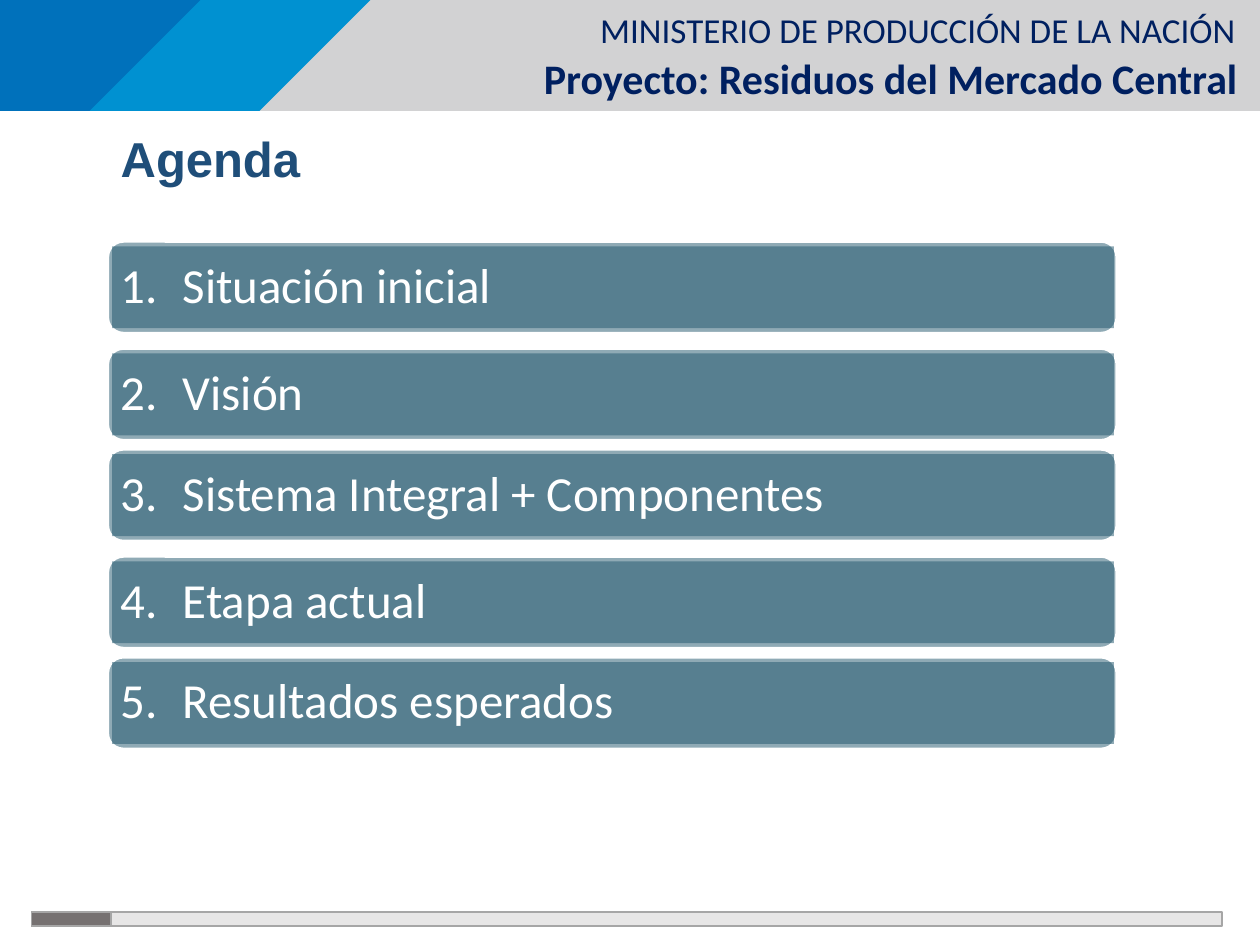
from dataclasses import dataclass

from lxml import etree
from pptx import Presentation
from pptx import util as u
from pptx.dml.color import RGBColor
from pptx.enum import shapes, text
from pptx.oxml import ns


@dataclass(frozen=True)
class Theme:
    band: str = "D2D2D3"
    sky: str = "0091D1"
    blue: str = "0071BB"
    navy: str = "002060"
    heading: str = "1F4E79"
    bar: str = "20566C"
    white: str = "FFFFFF"
    track: str = "E7E6E6"
    progress: str = "767171"
    outline: str = "A6A6A6"
    body_font: str = "Calibri"
    heading_font: str = "Arial"
    small: int = 20
    medium: int = 24
    large: int = 28


theme = Theme()
presentation = Presentation()
presentation.slide_width = u.Inches(10)
presentation.slide_height = u.Inches(7.5)
slide = presentation.slides.add_slide(presentation.slide_layouts[6])
column = presentation.slide_width // 100
row = presentation.slide_height // 75


def paint(shape, color, line=None, opacity=None):
    shape.shadow.inherit = False
    shape.fill.solid()
    shape.fill.fore_color.rgb = RGBColor.from_string(color)
    if opacity:
        color_element = shape.fill._xPr.find(f".//{ns.qn('a:srgbClr')}")
        etree.SubElement(color_element, ns.qn("a:alpha"), val=str(opacity * 1000))
    if line:
        shape.line.color.rgb = RGBColor.from_string(line)
        shape.line.width = u.Pt(1)
    else:
        shape.line.fill.background()


def write(shape, content, size, color, font=theme.body_font, bold=False, wrap=True,
          align=text.PP_ALIGN.LEFT, anchor=text.MSO_ANCHOR.TOP,
          margins=(1, 0.5), spacing=1.0, tab=None):
    frame = shape.text_frame
    frame.word_wrap = wrap
    frame.vertical_anchor = anchor
    frame.margin_left = frame.margin_right = int(margins[0] * column)
    frame.margin_top = frame.margin_bottom = int(margins[1] * row)
    paragraph = frame.paragraphs[0]
    paragraph.text = content
    paragraph.alignment = align
    paragraph.line_spacing = spacing
    if tab:
        tabs = etree.SubElement(paragraph._p.get_or_add_pPr(), ns.qn("a:tabLst"))
        etree.SubElement(tabs, ns.qn("a:tab"), pos=str(int(tab * column)), algn="l")
    paragraph.font.size = u.Pt(size)
    paragraph.font.name = font
    paragraph.font.bold = bold
    paragraph.font.color.rgb = RGBColor.from_string(color)


header_height = 8.8
for top_right, bottom_right, color in (
    (100, 100, theme.band),
    (29.4, 20.6, theme.sky),
    (15.9, 7.1, theme.blue),
):
    builder = slide.shapes.build_freeform(0, 0, scale=1.0)
    corners = ((top_right, 0), (bottom_right, header_height), (0, header_height))
    builder.add_line_segments([(int(x * column), int(y * row)) for x, y in corners])
    paint(builder.convert_to_shape(), color)

for content, (left, top, width, height), style in (
    ("MINISTERIO DE PRODUCCIÓN DE LA NACIÓN", (27.8, 0.7, 70.3, 3.4),
     dict(size=theme.small, color=theme.navy, margins=(0, 0),
          align=text.PP_ALIGN.RIGHT)),
    ("Proyecto: Residuos del Mercado Central", (13, 4.1, 86.2, 3.9),
     dict(size=theme.medium, color=theme.navy, bold=True, spacing=0.9,
          align=text.PP_ALIGN.RIGHT)),
    ("Agenda", (8.6, 9.7, 16.4, 5.7),
     dict(size=theme.large, color=theme.heading, font=theme.heading_font,
          bold=True, wrap=False)),
):
    box = slide.shapes.add_textbox(
        int(left * column), int(top * row), int(width * column), int(height * row))
    write(box, content, **style)

agenda = ("Situación inicial", "Visión", "Sistema Integral + Componentes",
          "Etapa actual", "Resultados esperados")
for index, topic in enumerate(agenda):
    top = 19.2 + 16.5 * (index // 2) + 8.5 * (index % 2)
    group = slide.shapes.add_group_shape()
    frame_bar = group.shapes.add_shape(
        shapes.MSO_SHAPE.ROUNDED_RECTANGLE,
        int(8.6 * column), int(top * row), 80 * column, int(7.2 * row))
    paint(frame_bar, theme.bar, line=theme.white, opacity=50)
    label_bar = group.shapes.add_shape(
        shapes.MSO_SHAPE.RECTANGLE,
        int(8.9 * column), int((top + 0.35) * row), int(79.5 * column), int(6.5 * row))
    paint(label_bar, theme.bar, opacity=50)
    write(label_bar, f"{index + 1}.\t{topic}", size=theme.large, color=theme.white,
          anchor=text.MSO_ANCHOR.MIDDLE, margins=(0.7, 0.7), spacing=0.9, tab=4.9)

for width, color in ((94.5, theme.track), (6.3, theme.progress)):
    progress_bar = slide.shapes.add_shape(
        shapes.MSO_SHAPE.RECTANGLE,
        int(2.5 * column), int(72.4 * row), int(width * column), int(1.1 * row))
    paint(progress_bar, color, line=theme.outline)

presentation.save("out.pptx")
